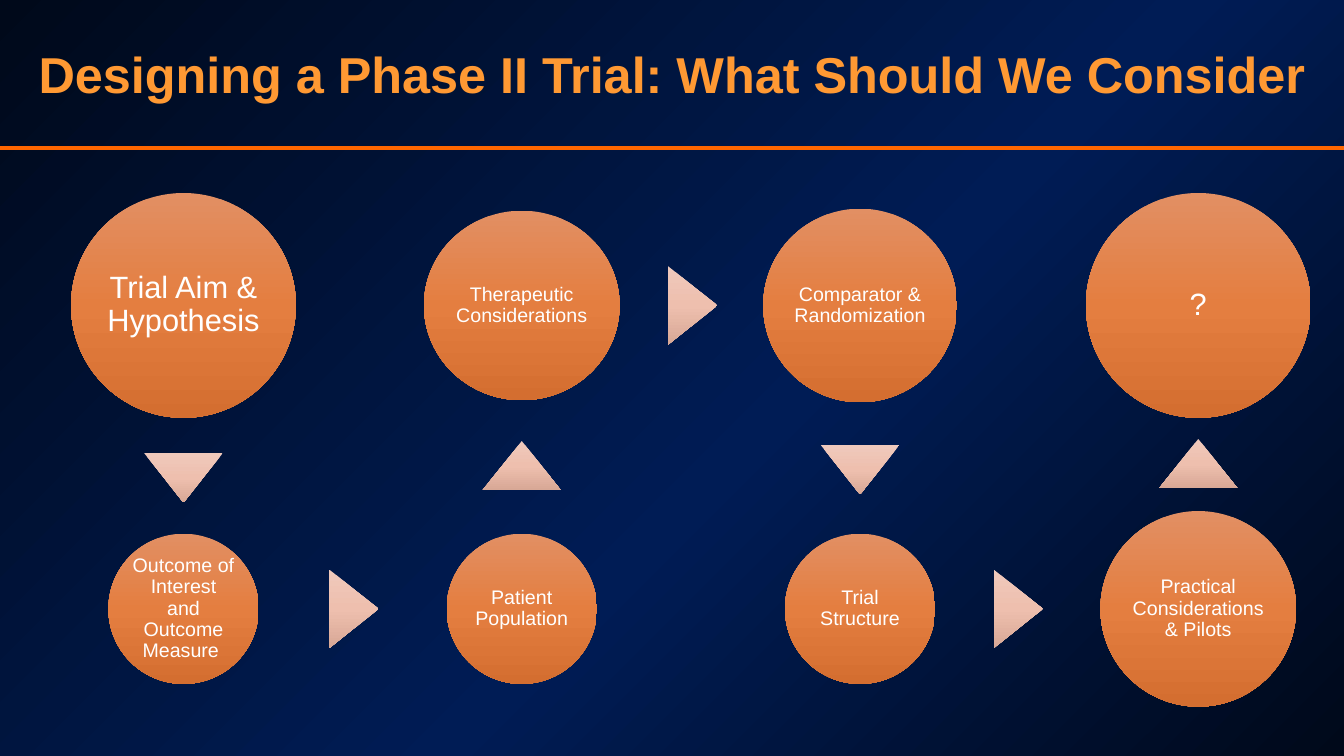
from lxml.etree import SubElement
from pptx import Presentation
from pptx.dml.color import RGBColor
from pptx.enum.shapes import MSO_CONNECTOR, MSO_SHAPE
from pptx.enum.text import MSO_ANCHOR, PP_ALIGN
from pptx.oxml.ns import qn
from pptx.util import Inches, Pt

WHITE = RGBColor(0xFF, 0xFF, 0xFF)
TITLE_ORANGE = RGBColor(0xFF, 0x99, 0x33)
RULE_ORANGE = RGBColor(0xFF, 0x66, 0x00)
NAVY = RGBColor(0x00, 0x1C, 0x55)
DARK_NAVY = RGBColor(0x00, 0x09, 0x1A)
CIRCLE_TOP = RGBColor(0xE2, 0x8F, 0x63)
CIRCLE_MID = RGBColor(0xE4, 0x7E, 0x40)
CIRCLE_BOTTOM = RGBColor(0xD4, 0x6E, 0x30)
ARROW_TOP = RGBColor(0xEF, 0xC9, 0xBC)
ARROW_MID = RGBColor(0xEE, 0xBF, 0xAE)
ARROW_BOTTOM = RGBColor(0xD8, 0xA8, 0x96)

BACKGROUND = [(0, DARK_NAVY), (57, NAVY), (100, DARK_NAVY)]
CIRCLE = [(0, CIRCLE_TOP), (50, CIRCLE_MID), (100, CIRCLE_BOTTOM)]
ARROW = [(0, ARROW_TOP), (50, ARROW_MID), (100, ARROW_BOTTOM)]

COLUMNS = [1.82 + 3.355 * i for i in range(4)]
TOP_ROW, BOTTOM_ROW = 3.03, 6.04
UP, RIGHT, DOWN = 0, 90, 180

STEPS = [
    ("Trial Aim & Hypothesis", 0, TOP_ROW, 2.23, 2.23, 22),
    ("Outcome of Interest and Outcome Measure ", 0, BOTTOM_ROW, 1.49, 1.49, 14),
    ("Patient Population", 1, BOTTOM_ROW, 1.49, 1.49, 14),
    ("Therapeutic Considerations", 1, TOP_ROW, 1.94, 1.88, 14),
    ("Comparator & Randomization", 2, TOP_ROW, 1.92, 1.92, 14),
    ("Trial Structure", 2, BOTTOM_ROW, 1.49, 1.49, 14),
    ("Practical Considerations & Pilots", 3, BOTTOM_ROW, 1.94, 1.94, 14),
    ("?", 3, TOP_ROW, 2.23, 2.23, 22),
]
ARROWS = [
    (COLUMNS[0], 4.74, DOWN),
    (3.51, BOTTOM_ROW, RIGHT),
    (COLUMNS[1], 4.62, UP),
    (6.87, TOP_ROW, RIGHT),
    (COLUMNS[2], 4.66, DOWN),
    (10.1, BOTTOM_ROW, RIGHT),
    (COLUMNS[3], 4.6, UP),
]


def set_gradient(fill, element, stops, angle):
    fill.gradient()
    fill.gradient_angle = 360 - angle
    grad = next(element.iter(qn("a:gradFill")))
    grad.set("rotWithShape", "0")
    stop_list = grad.find(qn("a:gsLst"))
    for stop in list(stop_list):
        stop_list.remove(stop)
    for position, color in stops:
        stop = SubElement(stop_list, qn("a:gs"), pos=str(position * 1000))
        SubElement(stop, qn("a:srgbClr"), val=str(color))


def write(tf, text, **font):
    p = tf.paragraphs[0]
    p.alignment = PP_ALIGN.CENTER
    r = p.add_run()
    r.text = text
    r.font.color.rgb = font.pop("color")
    for name, value in {"name": "Arial", **font}.items():
        setattr(r.font, name, value)
    return p


def add_centered(s, kind, x, y, w, h, stops):
    sp = s.shapes.add_shape(kind, Inches(x - w / 2), Inches(y - h / 2), Inches(w), Inches(h))
    sp.shadow.inherit = False
    sp.line.fill.background()
    set_gradient(sp.fill, sp.element, stops, 90)
    return sp


def add_step(s, text, column, y, w, h, size):
    sp = add_centered(s, MSO_SHAPE.OVAL, COLUMNS[column], y, w, h, CIRCLE)
    tf = sp.text_frame
    tf.word_wrap = True
    tf.vertical_anchor = MSO_ANCHOR.MIDDLE
    for side in ("left", "top", "right", "bottom"):
        setattr(tf, f"margin_{side}", Inches(0.02))
    write(tf, text, size=Pt(size), color=WHITE).line_spacing = 0.9


def add_arrow(s, x, y, rotation):
    sp = add_centered(s, MSO_SHAPE.ISOSCELES_TRIANGLE, x, y, 0.78, 0.49, ARROW)
    sp.rotation = rotation


def add_rule(s, y, width):
    line = s.shapes.add_connector(MSO_CONNECTOR.STRAIGHT, 0, Inches(y), width, Inches(y))
    line.line.color.rgb = RULE_ORANGE
    line.line.width = Pt(3)
    SubElement(line.element.spPr, qn("a:effectLst"))


def add_title(s, text):
    sp = s.shapes.add_textbox(Inches(0.1), Inches(0.38), Inches(13.14), Inches(0.71))
    sp.text_frame.word_wrap = True
    write(sp.text_frame, text, size=Pt(36), bold=True, color=TITLE_ORANGE)


def main():
    prs = Presentation()
    prs.slide_width, prs.slide_height = Inches(13.33), Inches(7.5)
    s = prs.slides.add_slide(prs.slide_layouts[6])
    set_gradient(s.background.fill, s.element, BACKGROUND, 45)
    add_rule(s, 1.47, prs.slide_width)
    add_title(s, "Designing a Phase II Trial: What Should We Consider")
    for step in STEPS:
        add_step(s, *step)
    for arrow in ARROWS:
        add_arrow(s, *arrow)
    prs.save("out.pptx")


if __name__ == "__main__":
    main()
